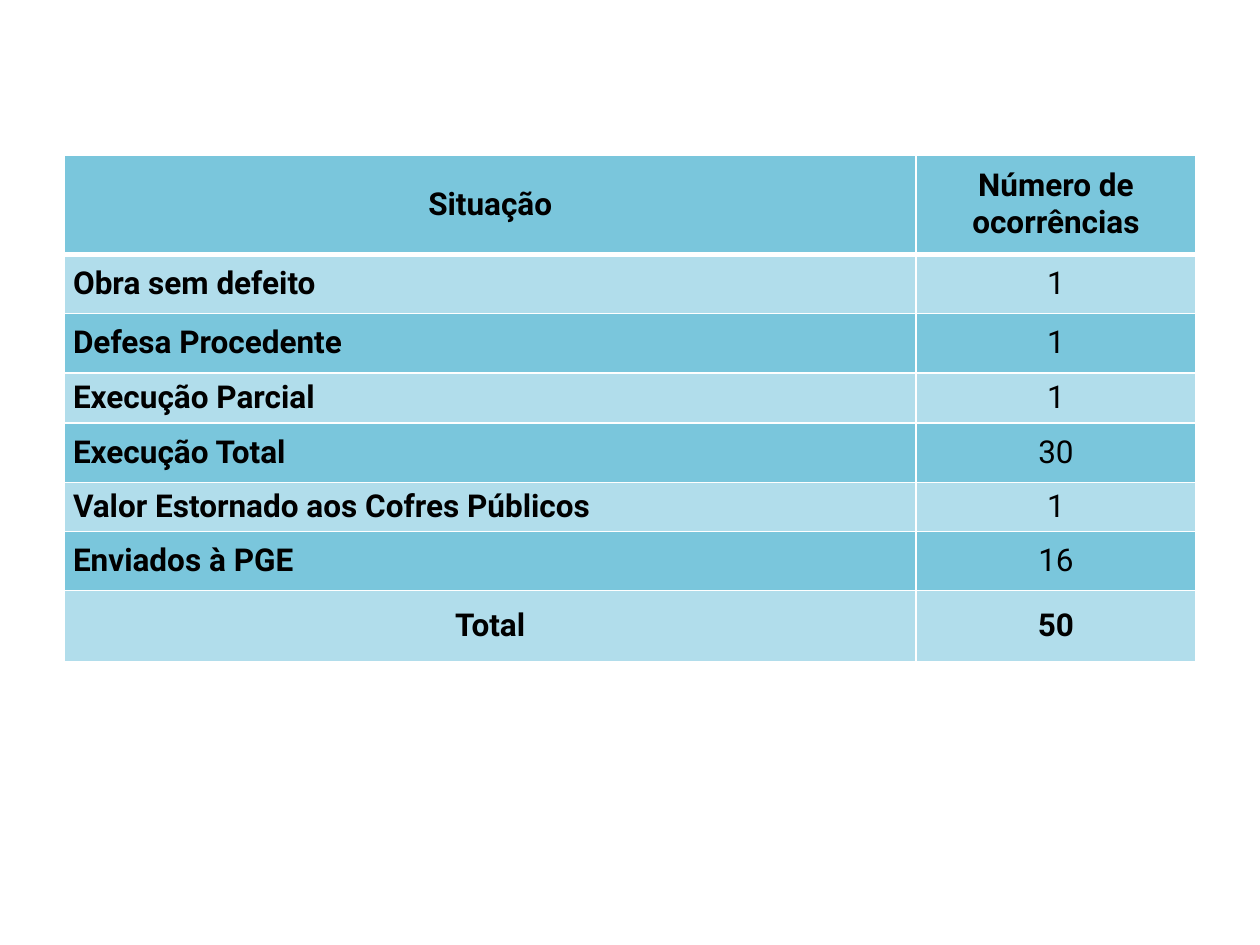
from lxml import etree
from pptx import Presentation
from pptx.dml.color import RGBColor
from pptx.enum.text import MSO_ANCHOR, PP_ALIGN
from pptx.oxml.ns import qn
from pptx.util import Inches, Pt

CENTER, JUSTIFY = PP_ALIGN.CENTER, PP_ALIGN.JUSTIFY
MIDDLE = MSO_ANCHOR.MIDDLE
FONT = "Roboto"
COLORS = {"dark": "7AC6DC", "light": "B1DDEB", "line": "FFFFFF", "text": "000000"}
ROWS = [
    ("Situação", "Número de ocorrências"),
    ("Obra sem defeito", "1"),
    ("Defesa Procedente", "1"),
    ("Execução Parcial", "1"),
    ("Execução Total", "30"),
    ("Valor Estornado aos Cofres Públicos", "1"),
    ("Enviados à PGE", "16"),
    ("Total", "50"),
]
HEIGHTS = [0.79, 0.47, 0.47, 0.4, 0.47, 0.39, 0.47, 0.56]
SHARES = [0.753, 0.247]


def add_borders(cell, widths):
    """Draw cell borders; widths maps a side (L, R, T, B) to points."""
    props = cell._tc.get_or_add_tcPr()
    for side, width in widths.items():
        line = etree.SubElement(props, qn(f"a:ln{side}"), w=str(Pt(width)))
        fill = etree.SubElement(line, qn("a:solidFill"))
        etree.SubElement(fill, qn("a:srgbClr"), val=COLORS["line"])


def fill_cell(cell, text, color, align, bold):
    cell.fill.solid()
    cell.fill.fore_color.rgb = RGBColor.from_string(COLORS[color])
    cell.vertical_anchor = MIDDLE
    cell.margin_left = cell.margin_right = Inches(0.07)
    cell.margin_top = cell.margin_bottom = 0
    cell.text_frame.text = text
    para = cell.text_frame.paragraphs[0]
    para.alignment = align
    font = para.runs[0].font
    font.name, font.size, font.bold = FONT, Pt(18), bold
    font.color.rgb = RGBColor.from_string(COLORS["text"])


def add_status(slide, left, top, width, height):
    """Table of cases by status, with a header row and a total row."""
    table = slide.shapes.add_table(
        len(ROWS), len(SHARES), Inches(left), Inches(top), Inches(width), Inches(height)
    ).table
    for col, share in zip(table.columns, SHARES):
        col.width = Inches(width * share)
    for row, size in zip(table.rows, HEIGHTS):
        row.height = Inches(height * size / sum(HEIGHTS))

    last = len(ROWS) - 1
    for r, texts in enumerate(ROWS):
        edge = r in (0, last)
        for c, text in enumerate(texts):
            cell = table.cell(r, c)
            add_borders(cell, {"L": 1, "R": 1, "T": 3 if r == 1 else 1, "B": 3 if r == 0 else 1})
            fill_cell(
                cell,
                text,
                color="light" if r % 2 else "dark",
                align=CENTER if edge or c else JUSTIFY,
                bold=edge or c == 0,
            )


def main():
    deck = Presentation()
    deck.slide_width, deck.slide_height = Inches(10), Inches(7.5)
    slide = deck.slides.add_slide(deck.slide_layouts[6])
    add_status(slide, 0.51, 1.23, 8.98, 4.02)
    deck.save("out.pptx")


if __name__ == "__main__":
    main()
